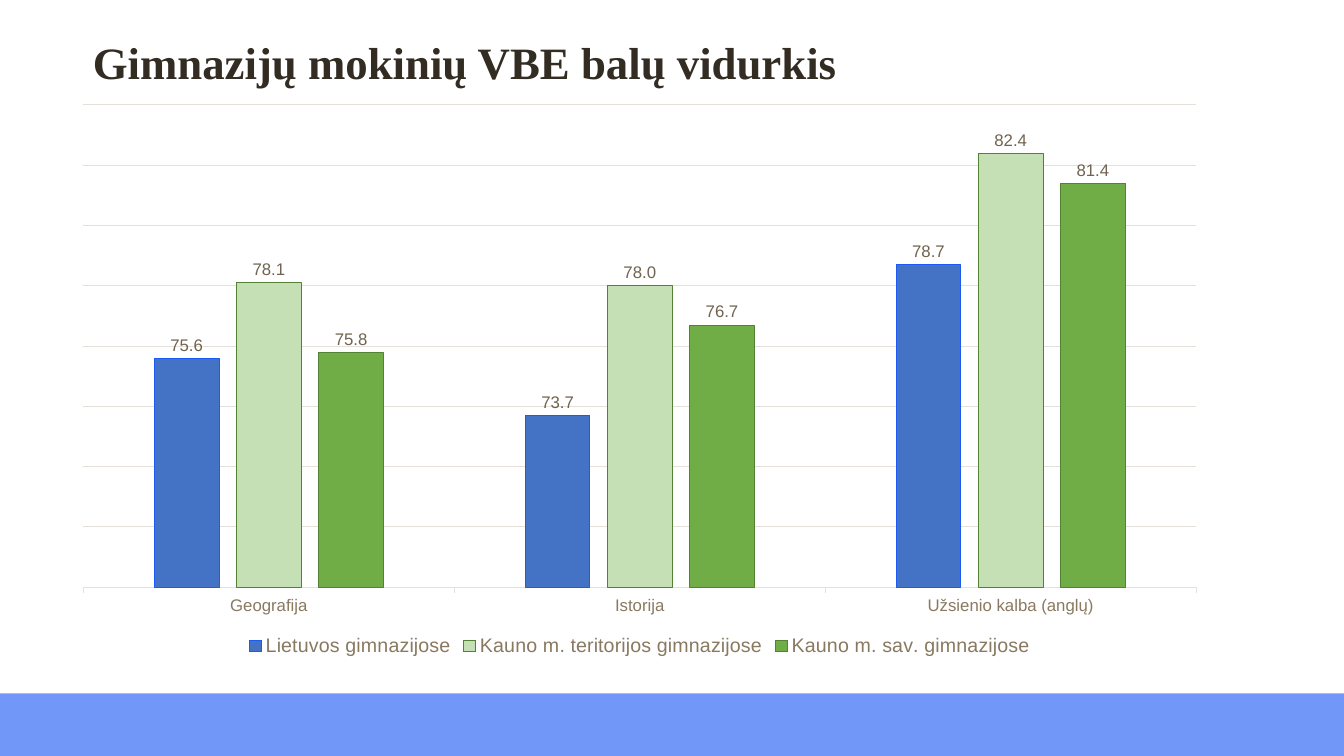
from dataclasses import dataclass

from lxml.etree import SubElement
from pptx import Presentation
from pptx.chart.chart import Chart
from pptx.chart.data import CategoryChartData
from pptx.chart.series import BarSeries
from pptx.dml.color import RGBColor
from pptx.enum.chart import XL_CHART_TYPE, XL_LABEL_POSITION, XL_LEGEND_POSITION, XL_TICK_MARK
from pptx.enum.shapes import MSO_SHAPE
from pptx.enum.text import MSO_ANCHOR, MSO_AUTO_SIZE, PP_ALIGN
from pptx.oxml.ns import qn
from pptx.shapes.autoshape import Shape
from pptx.slide import Slide
from pptx.text.text import Font
from pptx.util import Cm, Pt

WHITE = RGBColor(0xFF, 0xFF, 0xFF)
BAND_BLUE = RGBColor(0x71, 0x98, 0xF8)
DARK_BROWN = RGBColor(0x32, 0x2C, 0x23)
AXIS_BROWN = RGBColor(0x89, 0x79, 0x60)
LABEL_BROWN = RGBColor(0x70, 0x63, 0x4F)
GRID_BEIGE = RGBColor(0xE5, 0xE0, 0xDA)
BLUE = RGBColor(0x44, 0x72, 0xC4)
BRIGHT_BLUE = RGBColor(0x1B, 0x5B, 0xF2)
PALE_GREEN = RGBColor(0xC5, 0xE0, 0xB4)
GREEN = RGBColor(0x70, 0xAD, 0x47)
DARK_GREEN = RGBColor(0x54, 0x82, 0x35)

SLIDE_WIDTH, SLIDE_HEIGHT = Cm(33.87), Cm(19.05)
BAND_TOP = Cm(17.47)
SUBJECTS = ("Geografija", "Istorija", "Užsienio kalba (anglų)")


@dataclass(frozen=True)
class SchoolGroup:
    name: str
    scores: tuple[float, ...]
    fill: RGBColor
    outline: RGBColor


GROUPS = (
    SchoolGroup("Lietuvos gimnazijose", (75.6, 73.7, 78.7), BLUE, BRIGHT_BLUE),
    SchoolGroup("Kauno m. teritorijos gimnazijose", (78.1, 78.0, 82.4), PALE_GREEN, DARK_GREEN),
    SchoolGroup("Kauno m. sav. gimnazijose", (75.8, 76.7, 81.4), GREEN, DARK_GREEN),
)


def format_font(font: Font, *, size: float, color: RGBColor,
                name: str = "Arial", bold: bool = False) -> None:
    font.name = name
    font.size = Pt(size)
    font.bold = bold
    font.color.rgb = color


def write_text(shape: Shape, text: str, *, size: float, color: RGBColor,
               name: str, bold: bool, line_spacing: float) -> None:
    frame = shape.text_frame
    frame.margin_left = frame.margin_right = frame.margin_top = frame.margin_bottom = 0
    frame.word_wrap = True
    frame.auto_size = MSO_AUTO_SIZE.NONE
    frame.vertical_anchor = MSO_ANCHOR.TOP
    para = frame.paragraphs[0]
    para.alignment = PP_ALIGN.LEFT
    para.line_spacing = line_spacing
    span = para.add_run()
    span.text = text
    format_font(span.font, size=size, color=color, name=name, bold=bold)


def add_band(page: Slide) -> None:
    band = page.shapes.add_shape(MSO_SHAPE.RECTANGLE, 0, BAND_TOP,
                                 SLIDE_WIDTH, SLIDE_HEIGHT - BAND_TOP)
    band.shadow.inherit = False
    band.fill.solid()
    band.fill.fore_color.rgb = BAND_BLUE
    band.line.fill.background()


def place_plot(chart: Chart, *, left: float, top: float, width: float, height: float) -> None:
    """Fix the inner plot area, in fractions of the chart's size."""
    plot_area = chart.element.find(f".//{qn('c:plotArea')}")
    for old_layout in plot_area.findall(qn("c:layout")):
        plot_area.remove(old_layout)
    layout = SubElement(plot_area, qn("c:layout"))
    plot_area.insert(0, layout)
    manual = SubElement(layout, qn("c:manualLayout"))
    settings = {"layoutTarget": "inner", "xMode": "edge", "yMode": "edge",
                "x": left, "y": top, "w": width, "h": height}
    for tag, value in settings.items():
        SubElement(manual, qn(f"c:{tag}")).set("val", str(value))


def format_series(series: BarSeries, group: SchoolGroup) -> None:
    series.invert_if_negative = False
    series.format.fill.solid()
    series.format.fill.fore_color.rgb = group.fill
    series.format.line.color.rgb = group.outline
    series.format.line.width = Pt(0.75)
    labels = series.data_labels
    labels.show_value = True
    labels.position = XL_LABEL_POSITION.OUTSIDE_END
    labels.number_format = "0.0"
    labels.number_format_is_linked = False
    format_font(labels.font, size=12, color=LABEL_BROWN)


def format_axes(chart: Chart) -> None:
    subject_axis, score_axis = chart.category_axis, chart.value_axis
    subject_axis.major_tick_mark = XL_TICK_MARK.OUTSIDE
    format_font(subject_axis.tick_labels.font, size=12, color=AXIS_BROWN)
    score_axis.minimum_scale, score_axis.maximum_scale = 68, 84
    score_axis.major_unit = 2
    score_axis.has_major_gridlines = True
    score_axis.visible = False
    for line in (subject_axis.format.line, score_axis.major_gridlines.format.line):
        line.color.rgb = GRID_BEIGE
        line.width = Pt(0.75)


def add_score_chart(page: Slide) -> None:
    data = CategoryChartData(number_format="0.0")
    data.categories = SUBJECTS
    for group in GROUPS:
        data.add_series(group.name, group.scores)
    chart = page.shapes.add_chart(XL_CHART_TYPE.COLUMN_CLUSTERED, Cm(1.52), Cm(2.36),
                                  Cm(29.21), Cm(14.3), data).chart
    format_font(chart.font, size=10, color=DARK_BROWN)
    chart.has_title = False
    chart.has_legend = True
    chart.legend.position = XL_LEGEND_POSITION.BOTTOM
    chart.legend.include_in_layout = False
    format_font(chart.legend.font, size=14, color=AXIS_BROWN)
    plot = chart.plots[0]
    plot.vary_by_categories = False
    plot.gap_width, plot.overlap = 219, -27
    for series, group in zip(plot.series, GROUPS):
        format_series(series, group)
    format_axes(chart)
    place_plot(chart, left=0.02, top=0.02, width=0.96, height=0.85)


def main() -> None:
    deck = Presentation()
    deck.slide_width, deck.slide_height = SLIDE_WIDTH, SLIDE_HEIGHT
    page = deck.slides.add_slide(deck.slide_layouts.get_by_name("Title Only"))
    page.background.fill.solid()
    page.background.fill.fore_color.rgb = WHITE
    add_band(page)
    title = page.shapes.title
    title.left, title.top, title.width, title.height = Cm(2.34), Cm(1.02), Cm(29.21), Cm(1.75)
    write_text(title, "Gimnazijų mokinių VBE balų vidurkis", size=32, color=DARK_BROWN,
               name="Times New Roman", bold=True, line_spacing=0.9)
    add_score_chart(page)
    deck.save("out.pptx")


if __name__ == "__main__":
    main()
